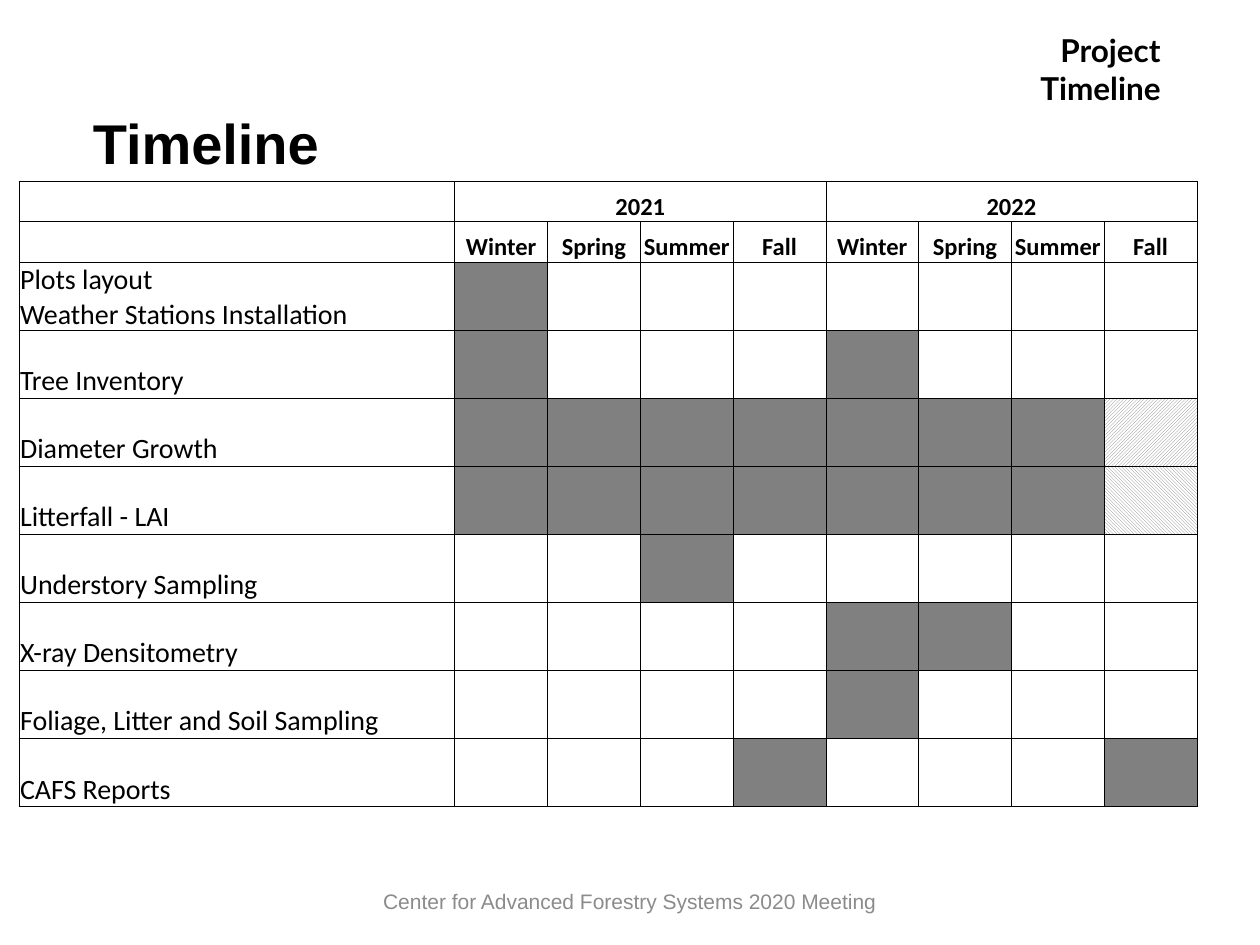
import pptx
import pptx.util
import pptx.dml.color
import pptx.enum.dml
import pptx.enum.text
from lxml import etree

Inches = pptx.util.Inches
RGBColor = pptx.dml.color.RGBColor
Align = pptx.enum.text.PP_ALIGN
Anchor = pptx.enum.text.MSO_ANCHOR
Pattern = pptx.enum.dml.MSO_PATTERN

BLACK = RGBColor(0, 0, 0)
WHITE = RGBColor(0xFF, 0xFF, 0xFF)
ACTIVE = RGBColor(0x80, 0x80, 0x80)
FOOTER = RGBColor(0x8B, 0x8B, 0x8B)

YEARS = ["2021", "2022"]
SEASONS = ["Winter", "Spring", "Summer", "Fall"]
# One mark per season: "#" active, "/" and "\" hatched, "." idle
TASKS = [
    ("Plots layout\nWeather Stations Installation", "#... ...."),
    ("Tree Inventory", "#... #..."),
    ("Diameter Growth", "#### ###/"),
    ("Litterfall - LAI", "#### ###\\"),
    ("Understory Sampling", "..#. ...."),
    ("X-ray Densitometry", ".... ##.."),
    ("Foliage, Litter and Soil Sampling", ".... #..."),
    ("CAFS Reports", "...# ...#"),
]
HATCHES = {"/": Pattern.DARK_UPWARD_DIAGONAL, "\\": Pattern.DARK_DOWNWARD_DIAGONAL}

# text, (left, top, width, height), frame settings, alignment, font settings
LABELS = [
    ("Center for Advanced Forestry Systems 2020 Meeting", (2.75, 6.95, 4.5, 0.4),
     {"word_wrap": True, "vertical_anchor": Anchor.MIDDLE}, Align.CENTER,
     {"name": "Arial", "size": pptx.util.Pt(12)}, FOOTER),
    ("Project Timeline", (7.49, 0.2, 1.82, 0.4),
     {"word_wrap": False}, Align.RIGHT,
     {"name": "Lato", "size": pptx.util.Pt(18), "bold": True}, BLACK),
    ("Timeline", (0, 0.81, 3.27, 0.64),
     {"word_wrap": True, "auto_size": pptx.enum.text.MSO_AUTO_SIZE.SHAPE_TO_FIT_TEXT},
     Align.CENTER, {"name": "Arial", "size": pptx.util.Pt(32), "bold": True}, BLACK),
]

TABLE_LEFT, TABLE_TOP, TABLE_WIDTH = 0.15, 1.44, 9.35
TASK_WIDTH, HEADER_HEIGHT, TASK_HEIGHT = 3.46, 0.32, 0.54
HEADER_ROWS = 2
CELL_FORMAT = {"margin_left": Inches(0.01), "margin_right": Inches(0.01),
               "margin_top": Inches(0.01), "margin_bottom": 0,
               "vertical_anchor": Anchor.BOTTOM}
DRAWING = "http://schemas.openxmlformats.org/drawingml/2006/main"


def apply(target, settings):
    for name, value in settings.items():
        setattr(target, name, value)


def write(frame, text, alignment, font, color):
    frame.text = text
    for para in frame.paragraphs:
        para.alignment = alignment
        for span in para.runs:
            apply(span.font, font)
            span.font.color.rgb = color


def add_borders(cell):
    properties = cell._tc.get_or_add_tcPr()
    for side in ("lnL", "lnR", "lnT", "lnB"):
        line = etree.SubElement(properties, f"{{{DRAWING}}}{side}",
                                w=str(pptx.util.Pt(0.5)))
        fill = etree.SubElement(line, f"{{{DRAWING}}}solidFill")
        etree.SubElement(fill, f"{{{DRAWING}}}srgbClr", val=str(BLACK))


def shade(cell, mark):
    if mark in HATCHES:
        cell.fill.patterned()
        cell.fill.pattern = HATCHES[mark]
        cell.fill.fore_color.rgb = ACTIVE
        cell.fill.back_color.rgb = WHITE
    elif mark == "#":
        cell.fill.solid()
        cell.fill.fore_color.rgb = ACTIVE
    else:
        cell.fill.background()


def add_schedule(page):
    columns = 1 + len(YEARS) * len(SEASONS)
    heights = [HEADER_HEIGHT] * HEADER_ROWS + [TASK_HEIGHT] * len(TASKS)
    table = page.shapes.add_table(
        len(heights), columns, Inches(TABLE_LEFT), Inches(TABLE_TOP),
        Inches(TABLE_WIDTH), Inches(sum(heights))).table
    table.first_row = table.horz_banding = False
    season_width = (TABLE_WIDTH - TASK_WIDTH) / (columns - 1)
    for index, column in enumerate(table.columns):
        column.width = Inches(season_width if index else TASK_WIDTH)
    for row, height in zip(table.rows, heights):
        row.height = Inches(height)
    for cell in table.iter_cells():
        apply(cell, CELL_FORMAT)
        add_borders(cell)
        shade(cell, ".")

    header = {"name": "Calibri", "size": pptx.util.Pt(14), "bold": True}
    body = {"name": "Calibri", "size": pptx.util.Pt(16), "bold": False}
    for index, year in enumerate(YEARS):
        first = 1 + index * len(SEASONS)
        cell = table.cell(0, first)
        cell.merge(table.cell(0, first + len(SEASONS) - 1))
        write(cell.text_frame, year, Align.CENTER, header, BLACK)
        for offset, season in enumerate(SEASONS):
            write(table.cell(1, first + offset).text_frame, season,
                  Align.CENTER, header, BLACK)
    for row, (task, marks) in enumerate(TASKS, HEADER_ROWS):
        write(table.cell(row, 0).text_frame, task, Align.LEFT, body, BLACK)
        for column, mark in enumerate(marks.replace(" ", ""), 1):
            shade(table.cell(row, column), mark)


def main():
    deck = pptx.Presentation()
    deck.slide_width, deck.slide_height = Inches(10), Inches(7.5)
    page = deck.slides.add_slide(deck.slide_layouts[6])
    for text, place, settings, alignment, font, color in LABELS:
        box = page.shapes.add_textbox(*map(Inches, place))
        apply(box.text_frame, settings)
        write(box.text_frame, text, alignment, font, color)
    add_schedule(page)
    deck.save("out.pptx")


if __name__ == "__main__":
    main()
